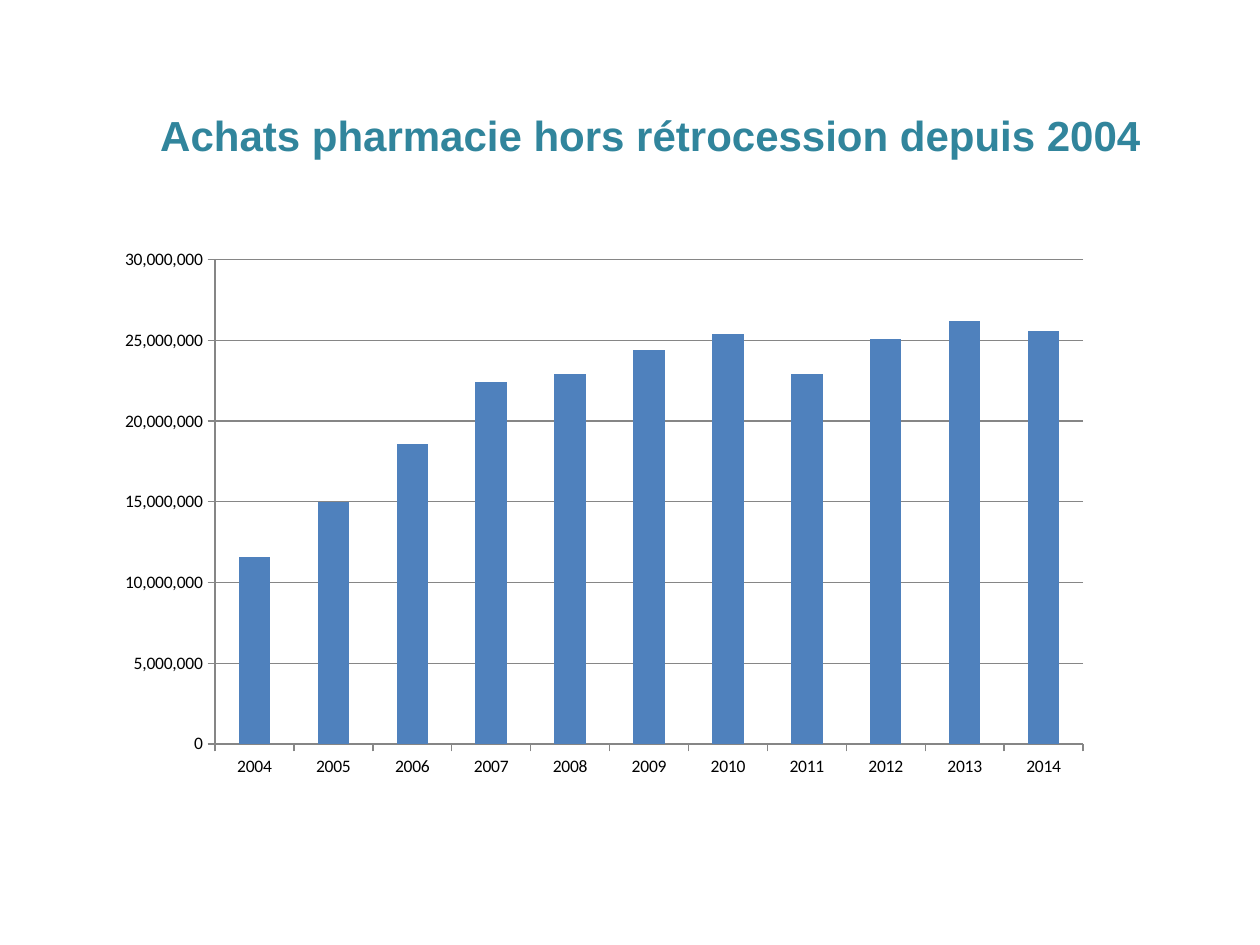
from pptx import Presentation
from pptx import util as u
from pptx.chart import data
from pptx.dml.color import RGBColor
from pptx.enum import chart as charts, text

PX = u.Inches(1) / 126
COLORS = {"title": "31859C", "bar": "4F81BD", "axis": "868686", "label": "000000"}
YEARS = range(2004, 2015)
PURCHASES_MILLIONS = [11.6, 15, 18.6, 22.4, 22.9, 24.4, 25.4, 22.9, 25.1, 26.2, 25.6]


def px(*lengths):
    return [u.Emu(round(length * PX)) for length in lengths]


class SlideBuilder:
    def __init__(self, slide):
        self.slide = slide

    def color(self, name):
        return RGBColor.from_string(COLORS[name])

    def style_font(self, font, name, size, color, bold=False):
        font.name, font.size, font.bold = name, u.Pt(size), bold
        font.color.rgb = self.color(color)

    def style_line(self, line):
        line.color.rgb = self.color("axis")
        line.width = u.Pt(0.75)

    def title(self, wording, box):
        frame = self.slide.shapes.add_textbox(*px(*box)).text_frame
        frame.word_wrap = True
        frame.vertical_anchor = text.MSO_ANCHOR.TOP
        frame.margin_left = u.Inches(0.2)
        paragraph = frame.paragraphs[0]
        paragraph.text = wording
        paragraph.alignment = text.PP_ALIGN.RIGHT
        self.style_font(paragraph.font, "Arial", 24, "title", bold=True)

    def column_chart(self, categories, values, box):
        chart_data = data.CategoryChartData(number_format="#,##0")
        chart_data.categories = categories
        chart_data.add_series("Series 1", values)
        chart = self.slide.shapes.add_chart(
            charts.XL_CHART_TYPE.COLUMN_CLUSTERED, *px(*box), chart_data).chart
        chart.has_legend = chart.has_title = False
        self.style_font(chart.font, "Calibri", 10, "label")

        plot = chart.plots[0]
        plot.gap_width = 150
        plot.vary_by_categories = False
        fill = plot.series[0].format.fill
        fill.solid()
        fill.fore_color.rgb = self.color("bar")

        for axis in (chart.category_axis, chart.value_axis):
            axis.major_tick_mark = charts.XL_TICK_MARK.OUTSIDE
            axis.minor_tick_mark = charts.XL_TICK_MARK.NONE
            self.style_line(axis.format.line)
        axis = chart.value_axis
        axis.minimum_scale, axis.maximum_scale = 0, 30_000_000
        axis.major_unit = 5_000_000
        axis.has_major_gridlines = True
        self.style_line(axis.major_gridlines.format.line)
        axis.tick_labels.number_format = "#,##0"
        axis.tick_labels.number_format_is_linked = False


def main():
    presentation = Presentation()
    presentation.slide_width, presentation.slide_height = px(1260, 945)
    slide = presentation.slides.add_slide(presentation.slide_layouts[6])
    builder = SlideBuilder(slide)
    builder.title("Achats pharmacie hors rétrocession depuis 2004", (39, 103, 1114, 158))
    builder.column_chart([str(year) for year in YEARS],
                         [round(value * 1_000_000) for value in PURCHASES_MILLIONS],
                         (105, 239, 998, 548))
    presentation.save("out.pptx")


if __name__ == "__main__":
    main()
